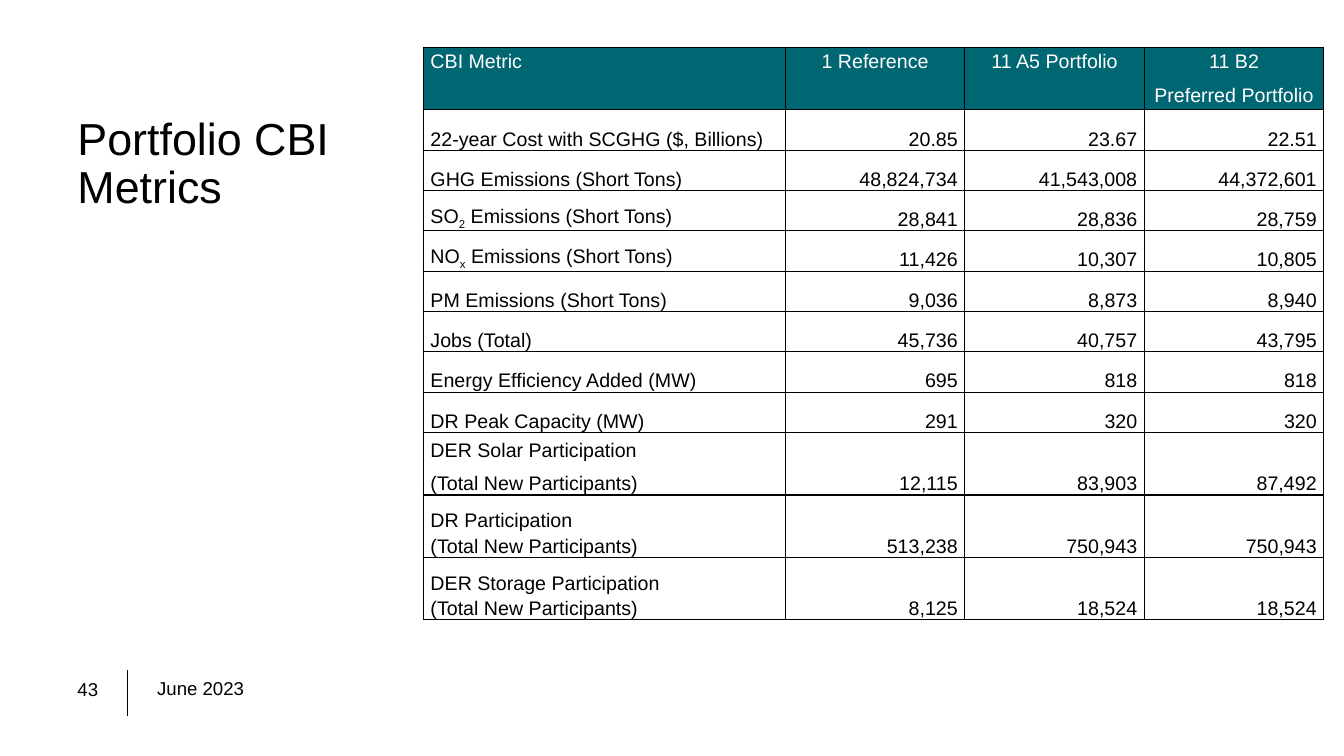
from lxml import etree
from pptx import Presentation
from pptx import util as u
from pptx.dml.color import RGBColor
from pptx.enum import shapes, text
from pptx.oxml import ns

hues = {"ink": "000000", "head": "006671", "pale": "FFFFFF"}
left, mid, right = text.PP_ALIGN.LEFT, text.PP_ALIGN.CENTER, text.PP_ALIGN.RIGHT

deck = Presentation()
deck.slide_width, deck.slide_height = u.Inches(13.33), u.Inches(7.5)
slide = deck.slides.add_slide(deck.slide_layouts[6])


def style(font, size, hue):
    for key, val in {"name": "Arial", "size": u.Pt(size)}.items():
        setattr(font, key, val)
    font.color.rgb = RGBColor.from_string(hues[hue])


def border(cell):
    props = cell._tc.get_or_add_tcPr()
    for i, side in enumerate(("lnL", "lnR", "lnT", "lnB")):
        line = etree.Element(ns.qn("a:" + side), w=str(u.Pt(1)))
        fill = etree.SubElement(line, ns.qn("a:solidFill"))
        etree.SubElement(fill, ns.qn("a:srgbClr"), val=hues["ink"])
        props.insert(i, line)


labels = [
    ("43", 13.3, (0.67, 6.68, 0.56, 0.33), text.MSO_ANCHOR.TOP, 1),
    ("June 2023", 13.3, (1.46, 6.69, 4.61, 0.33), text.MSO_ANCHOR.TOP, 0.9),
    ("Portfolio CBI Metrics", 32, (0.67, 0.4, 3.39, 2.47), text.MSO_ANCHOR.MIDDLE, 0.9),
]
for words, size, place, anchor, pitch in labels:
    frame = slide.shapes.add_textbox(*map(u.Inches, place)).text_frame
    for key, val in {"word_wrap": True, "vertical_anchor": anchor}.items():
        setattr(frame, key, val)
    para = frame.paragraphs[0]
    para.line_spacing = pitch
    run = para.add_run()
    run.text = words
    style(run.font, size, "ink")

rule = slide.shapes.add_connector(
    shapes.MSO_CONNECTOR.STRAIGHT, *map(u.Inches, (1.26, 6.65, 1.26, 7.1)))
rule.line.width = u.Pt(0.75)
rule.line.color.rgb = RGBColor.from_string(hues["ink"])
etree.SubElement(rule._element.spPr, ns.qn("a:effectLst"))

rows = [
    ("CBI Metric", "1 Reference", "11 A5 Portfolio", "11 B2\nPreferred Portfolio"),
    ("22-year Cost with SCGHG ($, Billions)", "20.85", "23.67", "22.51"),
    ("GHG Emissions (Short Tons)", "48,824,734", "41,543,008", "44,372,601"),
    ("SO_2_ Emissions (Short Tons)", "28,841", "28,836", "28,759"),
    ("NO_x_ Emissions (Short Tons)", "11,426", "10,307", "10,805"),
    ("PM Emissions (Short Tons)", "9,036", "8,873", "8,940"),
    ("Jobs (Total)", "45,736", "40,757", "43,795"),
    ("Energy Efficiency Added (MW)", "695", "818", "818"),
    ("DR Peak Capacity (MW)", "291", "320", "320"),
    ("DER Solar Participation\n(Total New Participants)", "12,115", "83,903", "87,492"),
    ("DR Participation\v(Total New Participants)", "513,238", "750,943", "750,943"),
    ("DER Storage Participation\v(Total New Participants)", "8,125", "18,524", "18,524"),
]
table = slide.shapes.add_table(
    len(rows), 4, *map(u.Inches, (4.2, 0.47, 8.92, 5.68))).table
table.first_row = table.horz_banding = False
for col, width in zip(table.columns, (3.59, 1.78, 1.78, 1.78)):
    col.width = u.Inches(width)

for r, row in enumerate(rows):
    tall = any("\n" in words or "\v" in words for words in row)
    table.rows[r].height = u.Inches(0.62 if tall else 0.4)
    for c, words in enumerate(row):
        cell = table.cell(r, c)
        form = {
            "margin_left": u.Inches(0.07), "margin_right": u.Inches(0.07),
            "margin_top": 0, "margin_bottom": 0,
            "vertical_anchor": text.MSO_ANCHOR.BOTTOM if r else text.MSO_ANCHOR.TOP,
        }
        for key, val in form.items():
            setattr(cell, key, val)
        if r:
            cell.fill.background()
        else:
            cell.fill.solid()
            cell.fill.fore_color.rgb = RGBColor.from_string(hues["head"])
        border(cell)
        cell.text_frame.text = words.replace("_", "\v") if "_" not in words else ""
        for n, para in enumerate(cell.text_frame.paragraphs):
            form = {
                "alignment": left if c == 0 else right if r else mid,
                "line_spacing": 1.15,
                "space_before": u.Pt(3 if n else 0),
                "space_after": u.Pt(3),
            }
            for key, val in form.items():
                setattr(para, key, val)
            if "_" in words:
                for i, part in enumerate(words.split("_")):
                    run = para.add_run()
                    run.text = part
                    if i == 1:
                        run._r.get_or_add_rPr().set("baseline", "-25000")
            for run in para.runs:
                style(run.font, 14, "ink" if r else "pale")

deck.save("out.pptx")
